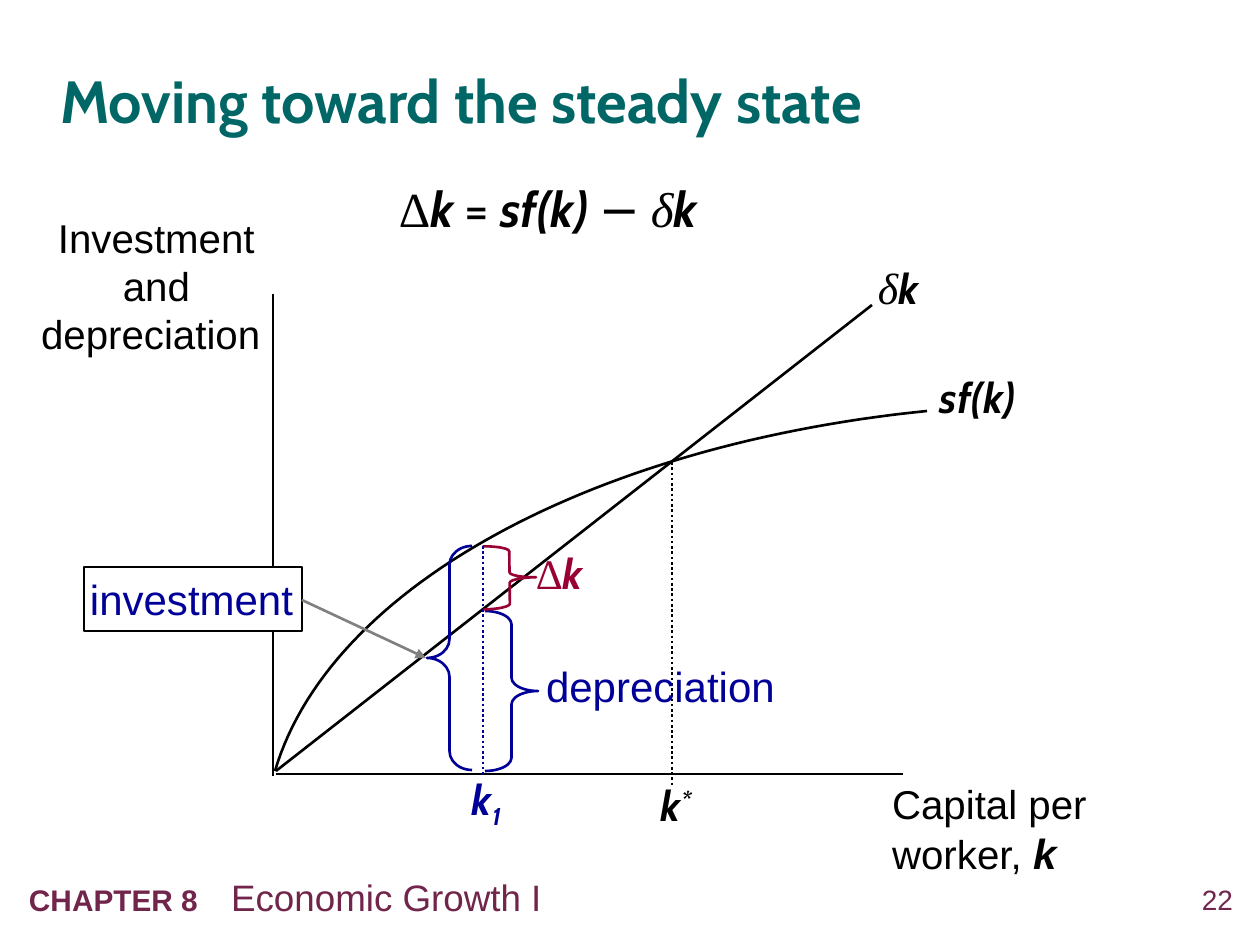
from lxml.etree import SubElement
from pptx import Presentation
from pptx.dml.color import RGBColor
from pptx.enum.dml import MSO_LINE_DASH_STYLE as DASH
from pptx.enum.shapes import MSO_CONNECTOR_TYPE as LINK, MSO_SHAPE as SHAPE
from pptx.enum.text import MSO_ANCHOR as ANCHOR, MSO_AUTO_SIZE as FIT, PP_ALIGN as ALIGN
from pptx.oxml.ns import qn
from pptx.util import Pt

SCALE = 914400 / 126
BLACK, NAVY, CRIMSON, PLUM, TEAL, GRAY = "000000", "000099", "990033", "71254B", "006666", "808080"
MATH = {"name": "Cabin", "bold": True, "italic": True}
GREEK = {"name": "Times New Roman"}
SLANTED_GREEK = GREEK | {"italic": True}
PLAIN_MATH = {"name": "Cabin"}
LINE_BREAK = ("\n", {})


def px(length):
    """Turn a length in px into EMU."""
    return round(length * SCALE)


def rgb(code):
    """Turn a hex string into a colour."""
    return RGBColor.from_string(code)


def apply(target, values):
    """Set each attribute of a target from a dict."""
    for name, value in values.items():
        setattr(target, name, value)


def write(shape, spans, size, color, align=ALIGN.LEFT, anchor=ANCHOR.MIDDLE, insets=(0, 0)):
    """Fill a shape with one paragraph of (text, format) spans."""
    frame = shape.text_frame
    side, end = map(px, insets)
    apply(frame, {"word_wrap": True, "auto_size": FIT.NONE, "vertical_anchor": anchor,
                  "margin_left": side, "margin_right": side,
                  "margin_top": end, "margin_bottom": end})
    para = frame.paragraphs[0]
    para.alignment = align
    for text, style in spans:
        if text == "\n":
            para.add_line_break()
            continue
        span = para.add_run()
        span.text = text
        values = {"name": "Arial", "size": size, "bold": False, "italic": False} | style
        baseline = values.pop("baseline", 0)
        values["size"] = Pt(values["size"])
        apply(span.font, values)
        span.font.color.rgb = rgb(color)
        if baseline:
            span._r.get_or_add_rPr().set("baseline", str(baseline * 1000))
    return para


def add_label(page, area, spans, size=24, color=BLACK, **layout):
    """Add a text box at an area given in px."""
    box = page.shapes.add_textbox(*map(px, area))
    write(box, spans, size, color, **layout)


def outline(shape, color, width=1.5):
    """Give a shape or connector its line."""
    shape.line.color.rgb = rgb(color)
    shape.line.width = Pt(width)


def add_line(page, ends, color=BLACK, width=1.5, dash=None, arrow=False):
    """Add a straight line, dotted or with an arrowhead if asked."""
    line = page.shapes.add_connector(LINK.STRAIGHT, *map(px, ends))
    outline(line, color, width)
    if dash:
        line.line.dash_style = dash
    if arrow:
        SubElement(line.line._get_or_add_ln(), qn("a:tailEnd"), type="triangle")
    SubElement(line._element.spPr, qn("a:effectLst"))


def add_brace(page, area, color, curl, rotation=0):
    """Add a curly brace with the given curl."""
    brace = page.shapes.add_shape(SHAPE.LEFT_BRACE, *map(px, area))
    brace.adjustments[0] = curl
    brace.rotation = rotation
    brace.shadow.inherit = False
    brace.fill.background()
    outline(brace, color)


def add_curve(page, controls, steps=60):
    """Draw a cubic Bezier curve as an open outline."""
    points = []
    for step in range(steps + 1):
        t = step / steps
        weights = ((1 - t) ** 3, 3 * t * (1 - t) ** 2, 3 * t * t * (1 - t), t ** 3)
        points.append(tuple(px(sum(w * p[axis] for w, p in zip(weights, controls)))
                            for axis in (0, 1)))
    builder = page.shapes.build_freeform(*points[0])
    builder.add_line_segments(points[1:], close=False)
    curve = builder.convert_to_shape()
    curve.shadow.inherit = False
    curve.fill.background()
    outline(curve, BLACK)


def add_boxed_label(page, area, text):
    """Add a white framed rectangle with text."""
    box = page.shapes.add_shape(SHAPE.RECTANGLE, *map(px, area))
    box.shadow.inherit = False
    box.fill.solid()
    box.fill.fore_color.rgb = rgb("FFFFFF")
    outline(box, BLACK, 1)
    write(box, [(text, {})], 24, NAVY, insets=(6, 6))


def add_title(page, area, text):
    """Place and format the title placeholder."""
    title = page.shapes.title
    apply(title, dict(zip(("left", "top", "width", "height"), map(px, area))))
    para = write(title, [(text, {"name": "Cabin", "bold": True})], 34, TEAL)
    para.line_spacing = 1.05


def add_footer(page):
    """Add the chapter line and the page number."""
    add_label(page, (1164, 883, 69, 40), [("22", {})], 16, PLUM,
              align=ALIGN.RIGHT, anchor=ANCHOR.TOP)
    add_label(page, (16, 869, 1031, 57),
              [("CHAPTER 8    ", {"size": 17, "bold": True}), ("Economic Growth I", {})],
              21, PLUM, anchor=ANCHOR.TOP, insets=(13, 6))


def add_axes(page):
    """Add both axes and their names."""
    add_line(page, (273, 294, 273, 776), width=1)
    add_line(page, (276, 774, 903, 774), width=1)
    add_label(page, (30, 213, 253, 145), [("Investment and depreciation ", {})], 23,
              align=ALIGN.CENTER)
    add_label(page, (892, 780, 221, 98),
              [("Capital per ", {}), LINE_BREAK, ("worker, ", {}),
               ("k", {"size": 24, "bold": True, "italic": True})], 23)


def add_schedules(page):
    """Add the investment curve, the depreciation line and the steady state."""
    add_curve(page, [(927, 411), (590, 445), (329, 588), (275, 771)])
    add_label(page, (940, 372, 111, 50), [("sf(k)", MATH)])
    add_label(page, (878, 261, 73, 53), [("δ", SLANTED_GREEK | {"size": 25}), ("k", MATH)])
    add_line(page, (276, 771, 872, 305))
    add_line(page, (672, 462, 672, 785), dash=DASH.ROUND_DOT)
    add_label(page, (661, 780, 73, 50), [("k", MATH), ("*", MATH | {"baseline": 30})])
    add_label(page, (399, 178, 428, 59),
              [("Δ", GREEK), ("k ", MATH), ("= ", PLAIN_MATH), ("sf(k) ", MATH),
               ("− ", PLAIN_MATH), ("δ", SLANTED_GREEK), ("k", MATH)], 28)


def add_gaps(page):
    """Mark investment, depreciation and their difference at the first capital level."""
    add_brace(page, (485, 611, 53, 160), NAVY, 0.25, 180)
    add_label(page, (546, 661, 231, 50), [("depreciation", {})], color=NAVY, anchor=ANCHOR.TOP)
    add_brace(page, (483, 546, 53, 63), CRIMSON, 0.1, 179.3)
    add_label(page, (536, 548, 73, 50), [("Δ", GREEK), ("k", MATH)], color=CRIMSON,
              anchor=ANCHOR.TOP)
    add_label(page, (472, 764, 73, 76), [("k", MATH), ("1", MATH | {"baseline": -25})],
              color=NAVY, insets=(0, 13))
    add_line(page, (483, 546, 483, 777), NAVY, dash=DASH.ROUND_DOT)
    add_boxed_label(page, (84, 567, 218, 64), "investment")
    add_brace(page, (427, 546, 45, 224), NAVY, 0.42)
    add_line(page, (302, 600, 426, 658), GRAY, arrow=True)


def main():
    """Build the slide and save it."""
    deck = Presentation()
    apply(deck, {"slide_width": px(1260), "slide_height": px(945)})
    page = deck.slides.add_slide(deck.slide_layouts[5])
    add_footer(page)
    add_title(page, (60, 44, 992, 107), "Moving toward the steady state")
    add_axes(page)
    add_schedules(page)
    add_gaps(page)
    deck.save("out.pptx")


if __name__ == "__main__":
    main()
